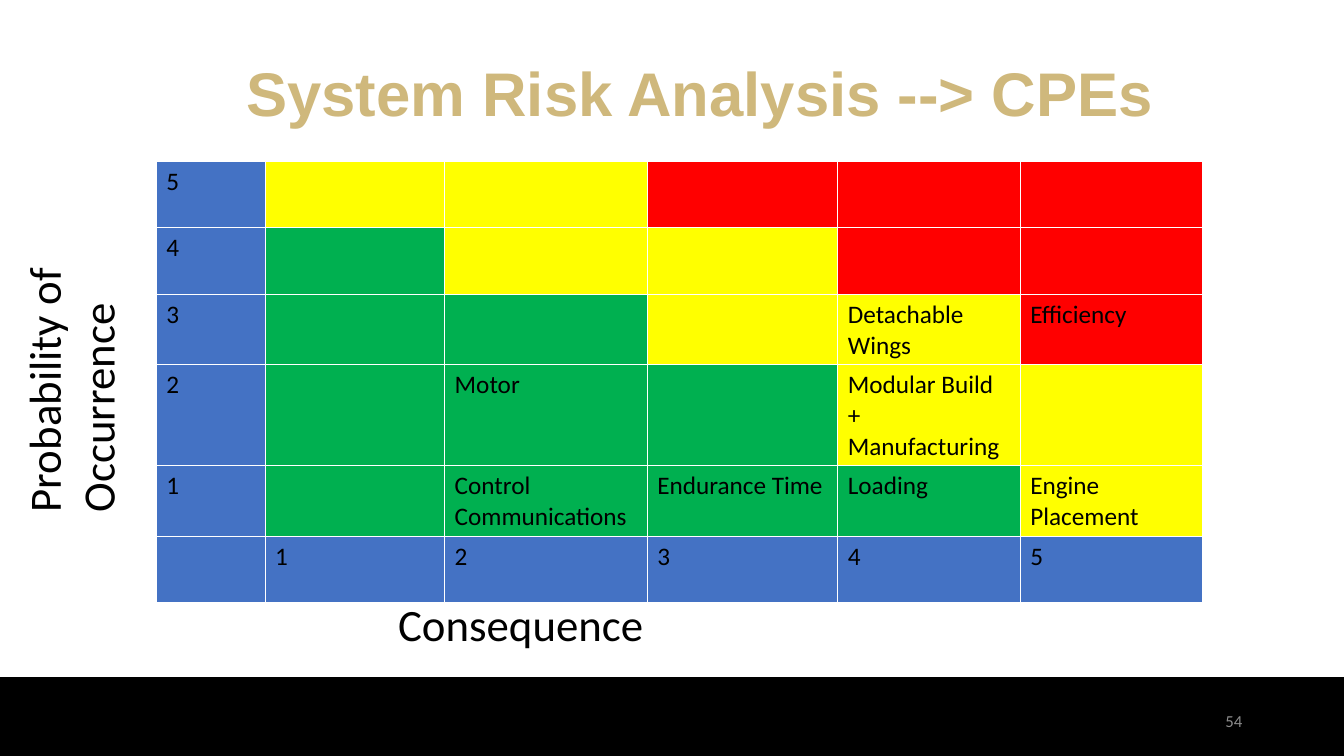
from pptx import Presentation
from pptx.dml.color import RGBColor
from pptx.enum import shapes, text
from pptx.util import Inches, Pt

FILLS = {"B": "4472C4", "G": "00B050", "Y": "FFFF00", "R": "FF0000"}
RISK_COLORS = ["BYYRRR", "BGYYRR", "BGGYYR", "BGGGYY", "BGGGGY", "BBBBBB"]
RISK_LABELS = [
    ["5", "", "", "", "", ""],
    ["4", "", "", "", "", ""],
    ["3", "", "", "", "Detachable Wings", "Efficiency"],
    ["2", "", "Motor", "", "Modular Build + Manufacturing", ""],
    ["1", "", "Control Communications", "Endurance Time", "Loading", "Engine Placement"],
    ["", "1", "2", "3", "4", "5"],
]
COLUMN_WIDTHS = [1.08, 1.78, 2.01, 1.89, 1.81, 1.81]
ROW_HEIGHT = 0.66


def rgb(value):
    return RGBColor.from_string(value)


def set_attrs(obj, values):
    for name, value in values.items():
        setattr(obj, name, value)


def set_font(font, size, color="000000", name="Calibri", bold=False):
    set_attrs(font, {"size": Pt(size), "name": name, "bold": bold})
    font.color.rgb = rgb(color)


def add_label(s, box, label, size, rotation=0, anchor=text.MSO_ANCHOR.TOP,
              paragraph=None, **font):
    sp = s.shapes.add_textbox(*map(Inches, box))
    sp.rotation = rotation
    tf = sp.text_frame
    set_attrs(tf, {"word_wrap": True, "vertical_anchor": anchor})
    p = tf.paragraphs[0]
    set_attrs(p, paragraph or {})
    r = p.add_run()
    r.text = label
    set_font(r.font, size, **font)


def add_footer_band(s):
    sp = s.shapes.add_shape(shapes.MSO_SHAPE.RECTANGLE, Inches(0), Inches(6.72),
                            Inches(13.33), Inches(0.78))
    sp.shadow.inherit = False
    sp.fill.solid()
    sp.fill.fore_color.rgb = rgb("000000")
    sp.line.color.rgb = rgb("000000")
    sp.line.width = Pt(1)


def add_risk_matrix(s):
    rows, cols = len(RISK_LABELS), len(COLUMN_WIDTHS)
    table = s.shapes.add_table(rows, cols, Inches(1.55), Inches(1.6),
                               Inches(sum(COLUMN_WIDTHS)),
                               Inches(ROW_HEIGHT * rows)).table
    table.horz_banding = False
    for column, width in zip(table.columns, COLUMN_WIDTHS):
        column.width = Inches(width)
    for row, colors, labels in zip(table.rows, RISK_COLORS, RISK_LABELS):
        row.height = Inches(ROW_HEIGHT)
        for cell, color, label in zip(row.cells, colors, labels):
            cell.fill.solid()
            cell.fill.fore_color.rgb = rgb(FILLS[color])
            if label:
                r = cell.text_frame.paragraphs[0].add_run()
                r.text = label
                set_font(r.font, 18)


def main():
    prs = Presentation()
    set_attrs(prs, {"slide_width": Inches(13.33), "slide_height": Inches(7.5)})
    s = prs.slides.add_slide(prs.slide_layouts[6])
    add_footer_band(s)
    add_label(s, (9.42, 6.95, 3, 0.4), "54", 12, color="8C8C8C",
              anchor=text.MSO_ANCHOR.MIDDLE,
              paragraph={"alignment": text.PP_ALIGN.RIGHT})
    add_risk_matrix(s)
    add_label(s, (-0.73, 3.16, 2.86, 1.18), "Probability of Occurrence", 32, rotation=270)
    add_label(s, (3.85, 5.87, 3.55, 0.64), "Consequence", 32)
    add_label(s, (1.35, 0.47, 11.19, 0.87), "System Risk Analysis --> CPEs", 44,
              color="CFB87C", name="Arial", bold=True, anchor=text.MSO_ANCHOR.BOTTOM,
              paragraph={"alignment": text.PP_ALIGN.CENTER, "line_spacing": 0.9})
    prs.save("out.pptx")


if __name__ == "__main__":
    main()
